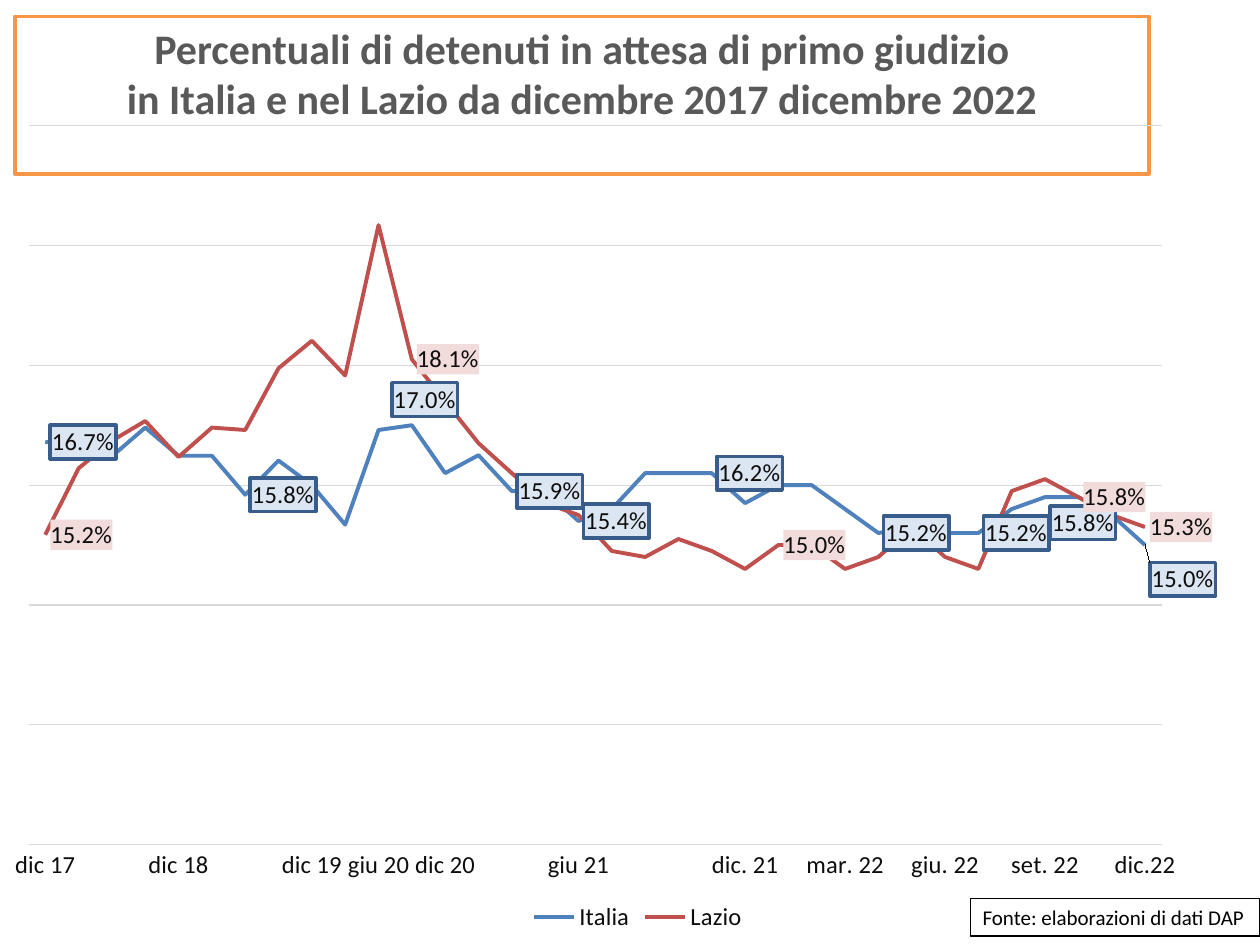
import dataclasses

import pptx
import pptx.chart.data
import pptx.dml.color
import pptx.enum.chart
import pptx.enum.shapes
import pptx.enum.text
import pptx.oxml
import pptx.oxml.ns
import pptx.util
from pptx.util import Inches


@dataclasses.dataclass(frozen=True)
class Theme:
    font: str = "Calibri"
    title_size: int = 24
    chart_size: int = 14
    source_size: int = 12
    white: str = "FFFFFF"
    black: str = "000000"
    title: str = "595959"
    frame: str = "F79646"
    text: str = "0D0D0D"
    grid: str = "D9D9D9"
    italia: str = "4F81BD"
    lazio: str = "C0504D"
    italia_label: str = "DCE6F2"
    italia_border: str = "385D8A"
    lazio_label: str = "F2DCDB"


THEME = Theme()

TICKS = {0: "dic.22", 3: "set. 22", 6: "giu. 22", 9: "mar. 22", 12: "dic. 21",
         17: "giu 21", 21: "dic 20", 23: "giu 20", 25: "dic 19",
         29: "dic 18", 33: "dic 17"}

ITALIA = [0.15, 0.155, 0.158, 0.158, 0.156, 0.152, 0.152, 0.153, 0.152,
          0.156, 0.16, 0.16, 0.157, 0.162, 0.162, 0.162, 0.156, 0.154,
          0.159, 0.159, 0.165, 0.162, 0.17, 0.1692, 0.1534, 0.16, 0.1641,
          0.1584, 0.1649, 0.1649, 0.1696, 0.1648, 0.1668, 0.1672]
LAZIO = [0.153, 0.155, 0.158, 0.161, 0.159, 0.146, 0.148, 0.153, 0.148,
         0.146, 0.15, 0.15, 0.146, 0.149, 0.151, 0.148, 0.149, 0.155,
         0.157, 0.162, 0.167, 0.174, 0.181, 0.2034, 0.1783, 0.1841, 0.1795,
         0.1692, 0.1696, 0.1647, 0.1707, 0.1674, 0.1628, 0.1517]

ITALIA_LABELS = {0: (0, 0.04), 3: (0, 0.03), 5: None, 8: None, 13: None,
                 17: None, 19: None, 22: (-0.02, -0.03), 27: None, 33: None}
LAZIO_LABELS = dict.fromkeys([0, 2, 11, 22, 33])


def rgb(value):
    return pptx.dml.color.RGBColor.from_string(value)


def xml(body):
    c, a = pptx.oxml.ns.nsdecls("c"), pptx.oxml.ns.nsdecls("a")
    tag, rest = body.split(">", 1)
    return pptx.oxml.parse_xml(f"{tag} {c} {a}>{rest}")


def style_font(font, size, color, bold=False):
    font.name = THEME.font
    font.size = pptx.util.Pt(size)
    font.bold = bold
    font.color.rgb = rgb(color)


def style_line(line, color, width):
    line.color.rgb = rgb(color)
    line.width = pptx.util.Pt(width)


def add_box(s, at, lines, border, width, size, color, bold, align, wrap):
    sp = s.shapes.add_shape(pptx.enum.shapes.MSO_SHAPE.RECTANGLE,
                            *(Inches(v) for v in at))
    sp.shadow.inherit = False
    sp.fill.solid()
    sp.fill.fore_color.rgb = rgb(THEME.white)
    style_line(sp.line, border, width)
    tf = sp.text_frame
    tf.word_wrap = wrap
    tf.vertical_anchor = pptx.enum.text.MSO_ANCHOR.TOP
    p = tf.paragraphs[0]
    p.alignment = align
    for i, text in enumerate(lines):
        if i:
            p.add_line_break()
        r = p.add_run()
        r.text = text
        style_font(r.font, size, color, bold)


def manual_layout(x, y, extra=""):
    return xml(f'<c:layout><c:manualLayout>{extra}<c:x val="{x}"/>'
               f'<c:y val="{y}"/></c:manualLayout></c:layout>')


def plot_layout(x, y, w, h):
    layout = manual_layout(x, y, '<c:layoutTarget val="inner"/>'
                                 '<c:xMode val="edge"/><c:yMode val="edge"/>')
    for tag, value in (("w", w), ("h", h)):
        layout[0].append(xml(f'<c:{tag}></c:{tag}>'))
        layout[0][-1].set("val", str(value))
    return layout


def label_points(series, offsets, fill, border):
    labels = series.data_labels
    labels.show_value = False
    outline = (f'<a:ln w="25400"><a:solidFill><a:srgbClr val="{border}"/>'
               '</a:solidFill></a:ln>' if border else "<a:ln><a:noFill/></a:ln>")
    for i, offset in offsets.items():
        label = series.points[i].data_label
        style_font(label.font, THEME.chart_size, THEME.text)
        label.position = pptx.enum.chart.XL_LABEL_POSITION.RIGHT
        element = labels._element.xpath(f'c:dLbl[c:idx/@val="{i}"]')[0]
        for old in element.xpath("c:spPr"):
            element.remove(old)
        element.xpath("c:txPr")[0].addprevious(xml(
            f'<c:spPr><a:solidFill><a:srgbClr val="{fill}"/></a:solidFill>'
            f'{outline}</c:spPr>'))
        if offset:
            element.xpath("c:idx")[0].addnext(manual_layout(*offset))


def style_axes(chart):
    cat = chart.category_axis
    cat.reverse_order = True
    cat.major_tick_mark = pptx.enum.chart.XL_TICK_MARK.NONE
    style_font(cat.tick_labels.font, THEME.chart_size, THEME.text)
    style_line(cat.format.line, THEME.grid, 0.75)
    cat._element.xpath("c:noMultiLvlLbl")[0].addprevious(
        xml('<c:tickLblSkip val="1"></c:tickLblSkip>'))
    val = chart.value_axis
    val.minimum_scale, val.maximum_scale, val.major_unit = 0.1, 0.22, 0.02
    val.has_major_gridlines = True
    style_line(val.major_gridlines.format.line, THEME.grid, 0.75)
    val.visible = False


def add_line_chart(s):
    data = pptx.chart.data.CategoryChartData(number_format="0.0%")
    data.categories = [TICKS.get(i, "") for i in range(len(ITALIA))]
    data.add_series("Italia", ITALIA)
    data.add_series("Lazio", LAZIO)
    chart = s.shapes.add_chart(pptx.enum.chart.XL_CHART_TYPE.LINE,
                               Inches(0.12), Inches(0.63), Inches(9.88),
                               Inches(6.81), data).chart
    chart.has_title = False
    style_font(chart.font, THEME.chart_size, THEME.text)
    chart.has_legend = True
    chart.legend.position = pptx.enum.chart.XL_LEGEND_POSITION.BOTTOM
    chart.legend.include_in_layout = False
    style_font(chart.legend.font, THEME.chart_size, THEME.text)
    style_axes(chart)
    area = chart._chartSpace.xpath("c:chart/c:plotArea")[0]
    for old in area.xpath("c:layout"):
        area.remove(old)
    area.insert(0, plot_layout(0.01, 0.054, 0.911, 0.838))
    chart.plots[0].vary_by_categories = False
    styles = ((THEME.italia, ITALIA_LABELS, THEME.italia_label, THEME.italia_border),
              (THEME.lazio, LAZIO_LABELS, THEME.lazio_label, None))
    for series, (color, offsets, fill, border) in zip(chart.plots[0].series, styles):
        series.smooth = False
        series.marker.style = pptx.enum.chart.XL_MARKER_STYLE.NONE
        style_line(series.format.line, color, 2.25)
        label_points(series, offsets, fill, border)


def main():
    prs = pptx.Presentation()
    prs.slide_width, prs.slide_height = Inches(10), Inches(7.5)
    s = prs.slides.add_slide(prs.slide_layouts[6])
    align = pptx.enum.text.PP_ALIGN
    add_box(s, (0.12, 0.13, 9, 1.25),
            ["Percentuali di detenuti in attesa di primo giudizio",
             "in Italia e nel Lazio da dicembre 2017 dicembre 2022"],
            THEME.frame, 2, THEME.title_size, THEME.title, True, align.CENTER, True)
    add_box(s, (7.7, 7.13, 2.3, 0.3), ["Fonte: elaborazioni di dati DAP"],
            THEME.black, 0.75, THEME.source_size, THEME.black, False, align.LEFT, False)
    add_line_chart(s)
    prs.save("out.pptx")


if __name__ == "__main__":
    main()
